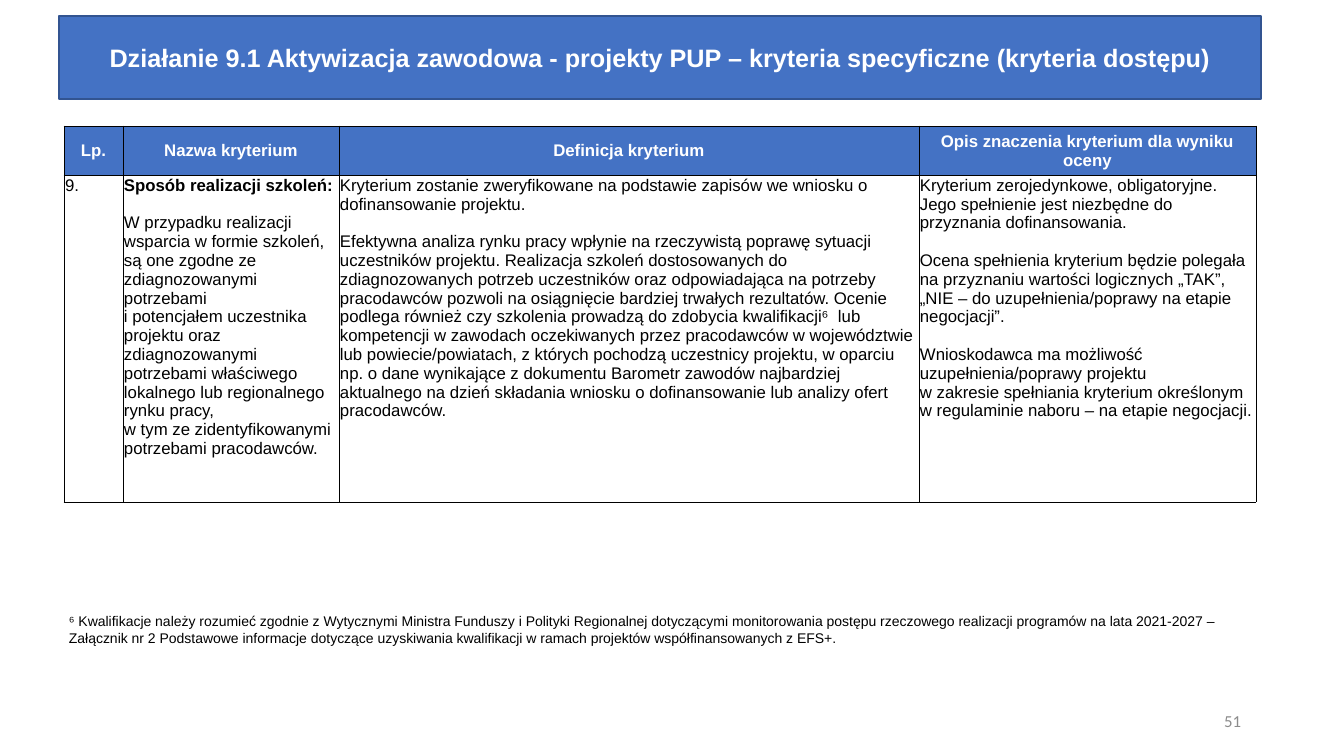
from lxml import etree
from pptx import Presentation
from pptx.dml.color import RGBColor
from pptx.enum.text import MSO_ANCHOR, MSO_AUTO_SIZE, PP_ALIGN
from pptx.oxml.ns import qn
from pptx.util import Emu, Pt

COLORS = {
    "blue": "4472C4",
    "outline": "325491",
    "white": "FFFFFF",
    "black": "000000",
    "gray": "8C8C8C",
}

TITLE = "Działanie 9.1 Aktywizacja zawodowa - projekty PUP – kryteria specyficzne (kryteria dostępu)"
HEADERS = ["Lp.", "Nazwa kryterium", "Definicja kryterium", "Opis znaczenia kryterium dla wyniku oceny"]
CRITERION = [
    ["9."],
    [
        "Sposób realizacji szkoleń:",
        "W przypadku realizacji wsparcia w formie szkoleń, są one zgodne ze zdiagnozowanymi potrzebami"
        "\vi potencjałem uczestnika projektu oraz zdiagnozowanymi potrzebami właściwego lokalnego lub "
        "regionalnego rynku pracy,\vw tym ze zidentyfikowanymi potrzebami pracodawców.",
    ],
    [
        "Kryterium zostanie zweryfikowane na podstawie zapisów we wniosku o dofinansowanie projektu.",
        "Efektywna analiza rynku pracy wpłynie na rzeczywistą poprawę sytuacji uczestników projektu. "
        "Realizacja szkoleń dostosowanych do zdiagnozowanych potrzeb uczestników oraz odpowiadająca na "
        "potrzeby pracodawców pozwoli na osiągnięcie bardziej trwałych rezultatów. Ocenie podlega również "
        "czy szkolenia prowadzą do zdobycia kwalifikacji⁶  lub kompetencji w zawodach oczekiwanych przez "
        "pracodawców w województwie lub powiecie/powiatach, z których pochodzą uczestnicy projektu, "
        "w oparciu np. o dane wynikające z dokumentu Barometr zawodów najbardziej aktualnego na dzień "
        "składania wniosku o dofinansowanie lub analizy ofert pracodawców.",
    ],
    [
        "Kryterium zerojedynkowe, obligatoryjne. Jego spełnienie jest niezbędne do przyznania dofinansowania.",
        "Ocena spełnienia kryterium będzie polegała na przyznaniu wartości logicznych „TAK”,"
        "\v„NIE – do uzupełnienia/poprawy na etapie negocjacji”.",
        "Wnioskodawca ma możliwość uzupełnienia/poprawy projektu\vw zakresie spełniania kryterium "
        "określonym w regulaminie naboru – na etapie negocjacji.",
    ],
]
FOOTNOTE = (
    "⁶ Kwalifikacje należy rozumieć zgodnie z Wytycznymi Ministra Funduszy i Polityki Regionalnej "
    "dotyczącymi monitorowania postępu rzeczowego realizacji programów na lata 2021-2027 – Załącznik nr 2 "
    "Podstawowe informacje dotyczące uzyskiwania kwalifikacji w ramach projektów współfinansowanych z EFS+."
)


def px(n):
    return Emu(round(n * 914400 / 100.8))


def rgb(name):
    return RGBColor.from_string(COLORS[name])


def write(tf, texts, size, color="black", bold=False, align=PP_ALIGN.LEFT, font="Arial", gap=0):
    tf.word_wrap = True
    for i, text in enumerate(texts):
        p = tf.add_paragraph() if i else tf.paragraphs[0]
        p.text = text
        p.alignment = align
        p.space_before = Pt(gap if i else 0)
        p.font.name = font
        p.font.size = Pt(size)
        p.font.bold = bold
        p.font.color.rgb = rgb(color)


def add_title(s, x, y, w, h):
    sp = s.shapes.title
    sp.left, sp.top, sp.width, sp.height = px(x), px(y), px(w), px(h)
    sp.fill.solid()
    sp.fill.fore_color.rgb = rgb("blue")
    sp.line.color.rgb = rgb("outline")
    sp.line.width = Pt(1)
    tf = sp.text_frame
    tf.auto_size = MSO_AUTO_SIZE.NONE
    tf.vertical_anchor = MSO_ANCHOR.MIDDLE
    write(tf, [TITLE], 18, "white", True, PP_ALIGN.CENTER)


def format_cell(cell, header):
    cell.margin_left = cell.margin_top = cell.margin_right = px(1)
    cell.margin_bottom = 0
    cell.vertical_anchor = MSO_ANCHOR.MIDDLE if header else MSO_ANCHOR.TOP
    tcPr = cell._tc.get_or_add_tcPr()
    for side in ("lnL", "lnR", "lnT", "lnB"):
        ln = etree.SubElement(tcPr, qn(f"a:{side}"), w=str(Pt(0.5)))
        fill = etree.SubElement(ln, qn("a:solidFill"))
        etree.SubElement(fill, qn("a:srgbClr"), val=COLORS["black"])
    if header:
        cell.fill.solid()
        cell.fill.fore_color.rgb = rgb("blue")
    else:
        cell.fill.background()


def add_criteria(s, x, y, widths, heights):
    frame = s.shapes.add_table(2, len(widths), px(x), px(y), px(sum(widths)), px(sum(heights)))
    table = frame.table
    table.horz_banding = False
    for row, h in zip(table.rows, heights):
        row.height = px(h)
    for i, w in enumerate(widths):
        table.columns[i].width = px(w)
        head, body = table.cell(0, i), table.cell(1, i)
        format_cell(head, True)
        format_cell(body, False)
        write(head.text_frame, [HEADERS[i]], 12, "white", True, PP_ALIGN.CENTER)
        write(body.text_frame, CRITERION[i], 12, gap=13.4)
    table.cell(1, 1).text_frame.paragraphs[0].font.bold = True


def add_footnote(s, x, y, w, h):
    tf = s.shapes.add_textbox(px(x), px(y), px(w), px(h)).text_frame
    write(tf, [FOOTNOTE], 10)


def add_page_number(s, x, y, w, h):
    tf = s.shapes.add_textbox(px(x), px(y), px(w), px(h)).text_frame
    tf.vertical_anchor = MSO_ANCHOR.MIDDLE
    write(tf, ["51"], 12, "gray", align=PP_ALIGN.RIGHT, font="Calibri")


def main():
    prs = Presentation()
    prs.slide_width, prs.slide_height = px(1344), px(756)
    s = prs.slides.add_slide(prs.slide_layouts[5])
    add_title(s, 59, 16, 1202, 83)
    add_criteria(s, 64, 126, [59, 216, 580, 337], [49, 327])
    add_footnote(s, 59, 608, 1225, 44)
    add_page_number(s, 949, 701, 302, 40)
    prs.save("out.pptx")


if __name__ == "__main__":
    main()
